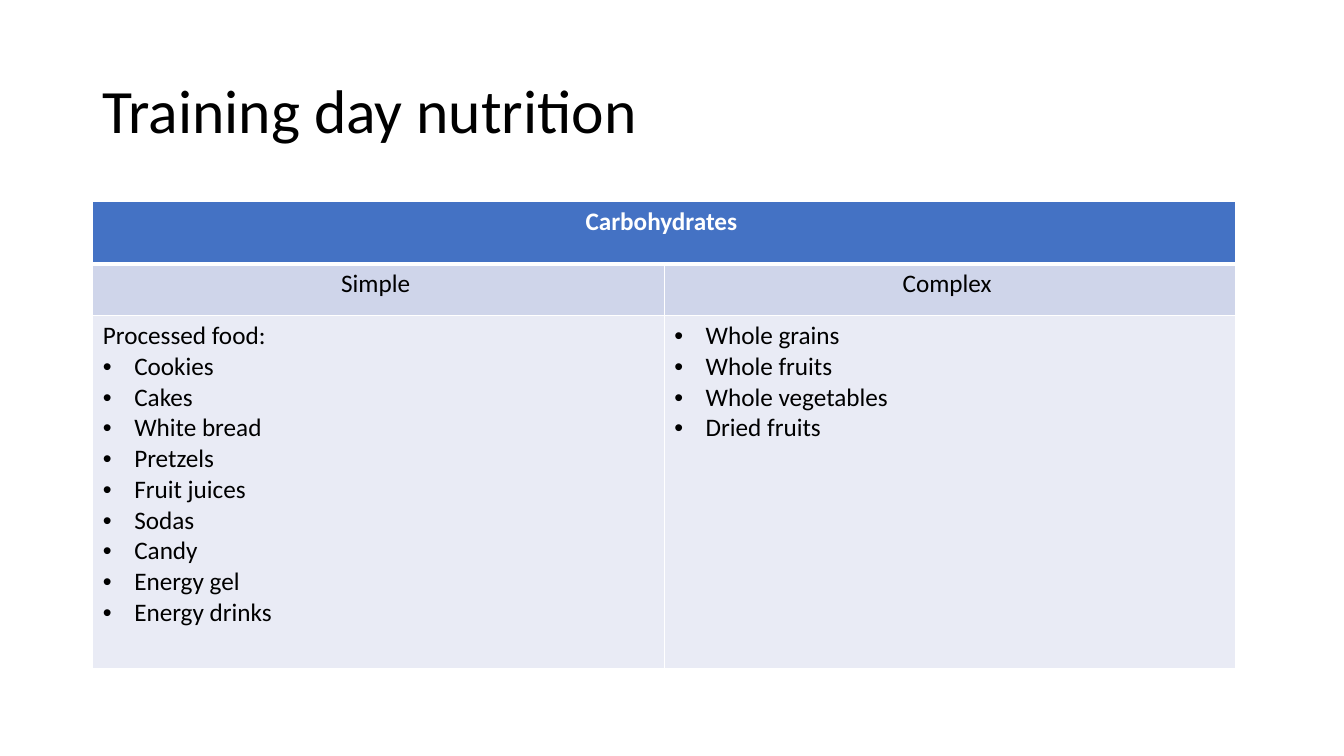
from lxml.etree import SubElement
from pptx import Presentation
from pptx.dml.color import RGBColor
from pptx.enum.text import MSO_ANCHOR, PP_ALIGN
from pptx.oxml.ns import qn
from pptx.util import Cm, Pt

BLACK, WHITE = "000000", "FFFFFF"
HEADER, SUBHEADER, BODY = "4472C4", "CFD5EA", "E9EBF5"
PROCESSED = ["Cookies", "Cakes", "White bread", "Pretzels", "Fruit juices",
             "Sodas", "Candy", "Energy gel", "Energy drinks"]
COMPLEX = ["Whole grains", "Whole fruits", "Whole vegetables", "Dried fruits"]


def rgb(color):
    """Turn a hex string into a colour."""
    return RGBColor.from_string(color)


def write(p, text, size=18, color=BLACK, bold=False, align=PP_ALIGN.LEFT, bullet=False):
    """Write one formatted run into a paragraph."""
    p.alignment = align
    r = p.add_run()
    r.text = text
    r.font.name = "Calibri"
    r.font.size = Pt(size)
    r.font.bold = bold
    r.font.color.rgb = rgb(color)
    if bullet:
        pPr = p._p.get_or_add_pPr()
        pPr.set("marL", str(Cm(0.79)))
        pPr.set("indent", str(-Cm(0.79)))
        SubElement(pPr, qn("a:buFont"), typeface="Arial")
        SubElement(pPr, qn("a:buChar"), char="•")


def add_title(s, text):
    """Add the slide title."""
    tf = s.shapes.add_textbox(Cm(2.33), Cm(1.01), Cm(29.21), Cm(3.68)).text_frame
    tf.word_wrap = True
    tf.vertical_anchor = MSO_ANCHOR.MIDDLE
    tf.paragraphs[0].line_spacing = 0.9
    write(tf.paragraphs[0], text, size=44)


def style_cell(cell, fill, top=1, bottom=1):
    """Give a cell white borders and a plain fill."""
    tcPr = cell._tc.get_or_add_tcPr()
    for side, width in (("L", 1), ("R", 1), ("T", top), ("B", bottom)):
        ln = SubElement(tcPr, qn(f"a:ln{side}"), w=str(Pt(width)))
        SubElement(SubElement(ln, qn("a:solidFill")), qn("a:srgbClr"), val=WHITE)
    cell.fill.solid()
    cell.fill.fore_color.rgb = rgb(fill)


def fill_list(cell, items, heading=None):
    """Fill a cell with a bulleted list under an optional heading."""
    lines = [(item, True) for item in items]
    if heading:
        lines.insert(0, (heading, False))
    tf = cell.text_frame
    for i, (text, bullet) in enumerate(lines):
        p = tf.add_paragraph() if i else tf.paragraphs[0]
        write(p, text, bullet=bullet)


def add_food_table(s):
    """Add the table of simple and complex carbohydrates."""
    table = s.shapes.add_table(3, 2, Cm(2.34), Cm(5.08), Cm(28.8), Cm(11.78)).table
    table.horz_banding = False
    for column in table.columns:
        column.width = Cm(14.4)
    for row, height in zip(table.rows, (1.57, 1.3, 8.91)):
        row.height = Cm(height)
    for row, fill, top, bottom in zip(table.rows, (HEADER, SUBHEADER, BODY), (1, 3, 1), (3, 1, 1)):
        for cell in row.cells:
            style_cell(cell, fill, top, bottom)
    table.cell(0, 0).merge(table.cell(0, 1))
    write(table.cell(0, 0).text_frame.paragraphs[0], "Carbohydrates ",
          color=WHITE, bold=True, align=PP_ALIGN.CENTER)
    for col, name in enumerate(("Simple ", "Complex ")):
        write(table.cell(1, col).text_frame.paragraphs[0], name, align=PP_ALIGN.CENTER)
    fill_list(table.cell(2, 0), PROCESSED, heading="Processed food:")
    fill_list(table.cell(2, 1), COMPLEX)


def main():
    """Build and save the slide."""
    prs = Presentation()
    prs.slide_width, prs.slide_height = Cm(33.87), Cm(19.05)
    s = prs.slides.add_slide(prs.slide_layouts[6])
    add_title(s, "Training day nutrition")
    add_food_table(s)
    prs.save("out.pptx")


if __name__ == "__main__":
    main()
